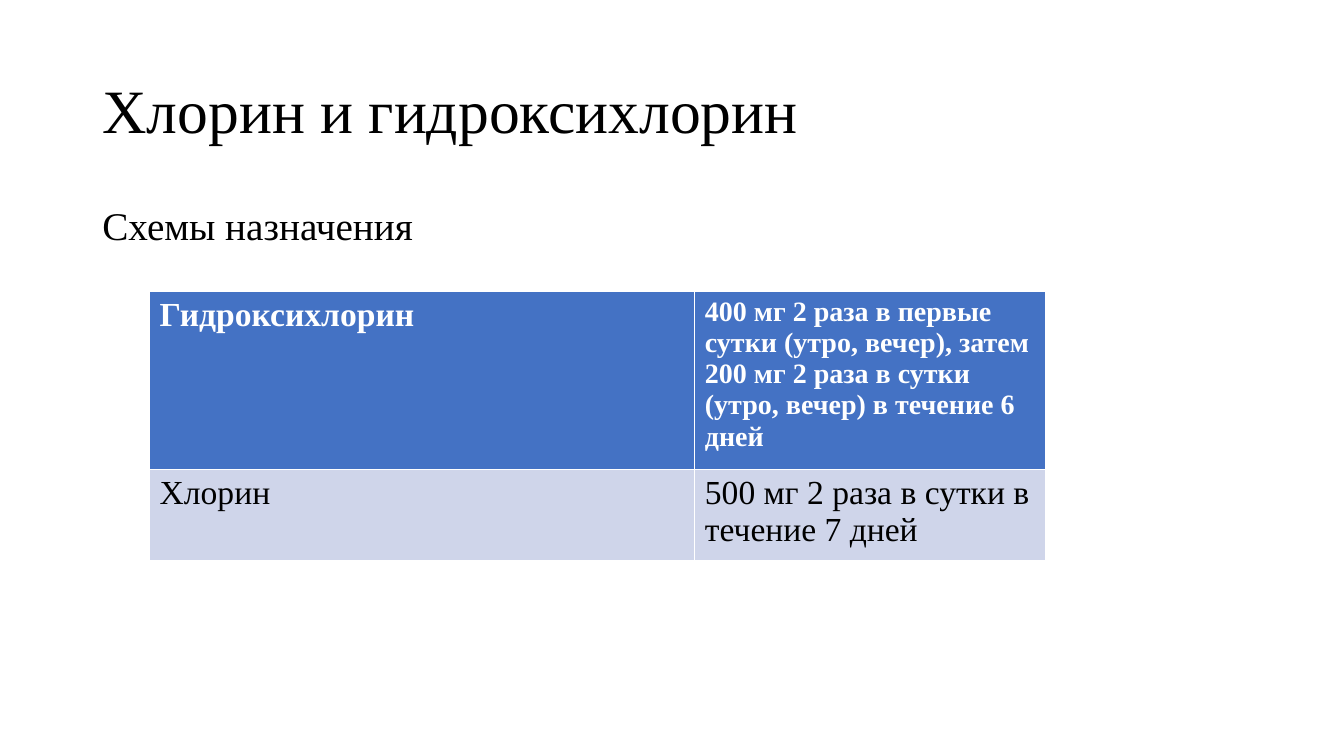
from dataclasses import dataclass

from pptx import Presentation
from pptx.dml.color import RGBColor as RGB
from pptx.enum.text import MSO_ANCHOR as Anchor
from pptx.slide import Slide
from pptx.text.text import TextFrame as Frame
from pptx.util import Cm, Pt

HUES = {"ink": "000000", "paper": "FFFFFF", "head": "4472C4", "band": "CFD5EA"}
FACE = "Times New Roman"


@dataclass
class Label:
    text: str
    size: int
    hue: str = "ink"
    bold: bool = False


@dataclass
class Box:
    label: Label
    top: float
    height: float
    anchor: Anchor
    before: int = 0


@dataclass
class Row:
    height: float
    fill: str
    cells: list[Label]


BOXES = [
    Box(Label("Хлорин и гидроксихлорин", 44), 1.02, 3.68, Anchor.MIDDLE),
    Box(Label("Схемы назначения", 28), 5.08, 12.09, Anchor.TOP, 10),
]
WIDTHS = [13.74, 8.84]
ROWS = [
    Row(4.15, "head", [
        Label("Гидроксихлорин", 24, "paper", True),
        Label("400 мг 2 раза в первые сутки (утро, вечер), затем "
              "200 мг 2 раза в сутки (утро, вечер) в течение 6 дней",
              20, "paper", True),
    ]),
    Row(2.1, "band", [
        Label("Хлорин", 24),
        Label("500 мг 2 раза в сутки в течение 7 дней", 24),
    ]),
]


def color(hue: str) -> RGB:
    return RGB.from_string(HUES[hue])


def write(frame: Frame, label: Label) -> None:
    run = frame.paragraphs[0].add_run()
    run.text = label.text
    style = {"name": FACE, "size": Pt(label.size), "bold": label.bold}
    for key, value in style.items():
        setattr(run.font, key, value)
    run.font.color.rgb = color(label.hue)


def draw_box(slide: Slide, box: Box) -> None:
    shape = slide.shapes.add_textbox(Cm(2.33), Cm(box.top), Cm(29.21), Cm(box.height))
    frame = shape.text_frame
    write(frame, box.label)
    for key, value in {"word_wrap": True, "vertical_anchor": box.anchor}.items():
        setattr(frame, key, value)
    gaps = {"line_spacing": 0.9, "space_before": Pt(box.before)}
    for key, value in gaps.items():
        setattr(frame.paragraphs[0], key, value)


def draw_table(slide: Slide, rows: list[Row]) -> None:
    high = sum(row.height for row in rows)
    # The default table style supplies the white rules
    table = slide.shapes.add_table(
        len(rows), len(WIDTHS), Cm(3.77), Cm(7.35), Cm(sum(WIDTHS)), Cm(high)).table
    for col, width in zip(table.columns, WIDTHS):
        col.width = Cm(width)
    for line, row in zip(table.rows, rows):
        line.height = Cm(row.height)
        for cell, label in zip(line.cells, row.cells):
            cell.fill.solid()
            cell.fill.fore_color.rgb = color(row.fill)
            write(cell.text_frame, label)


def main() -> None:
    deck = Presentation()
    deck.slide_width, deck.slide_height = Cm(33.87), Cm(19.05)
    slide = deck.slides.add_slide(deck.slide_layouts[6])

    # Title and subtitle
    for box in BOXES:
        draw_box(slide, box)

    # Dosing table
    draw_table(slide, ROWS)
    deck.save("out.pptx")


if __name__ == "__main__":
    main()
